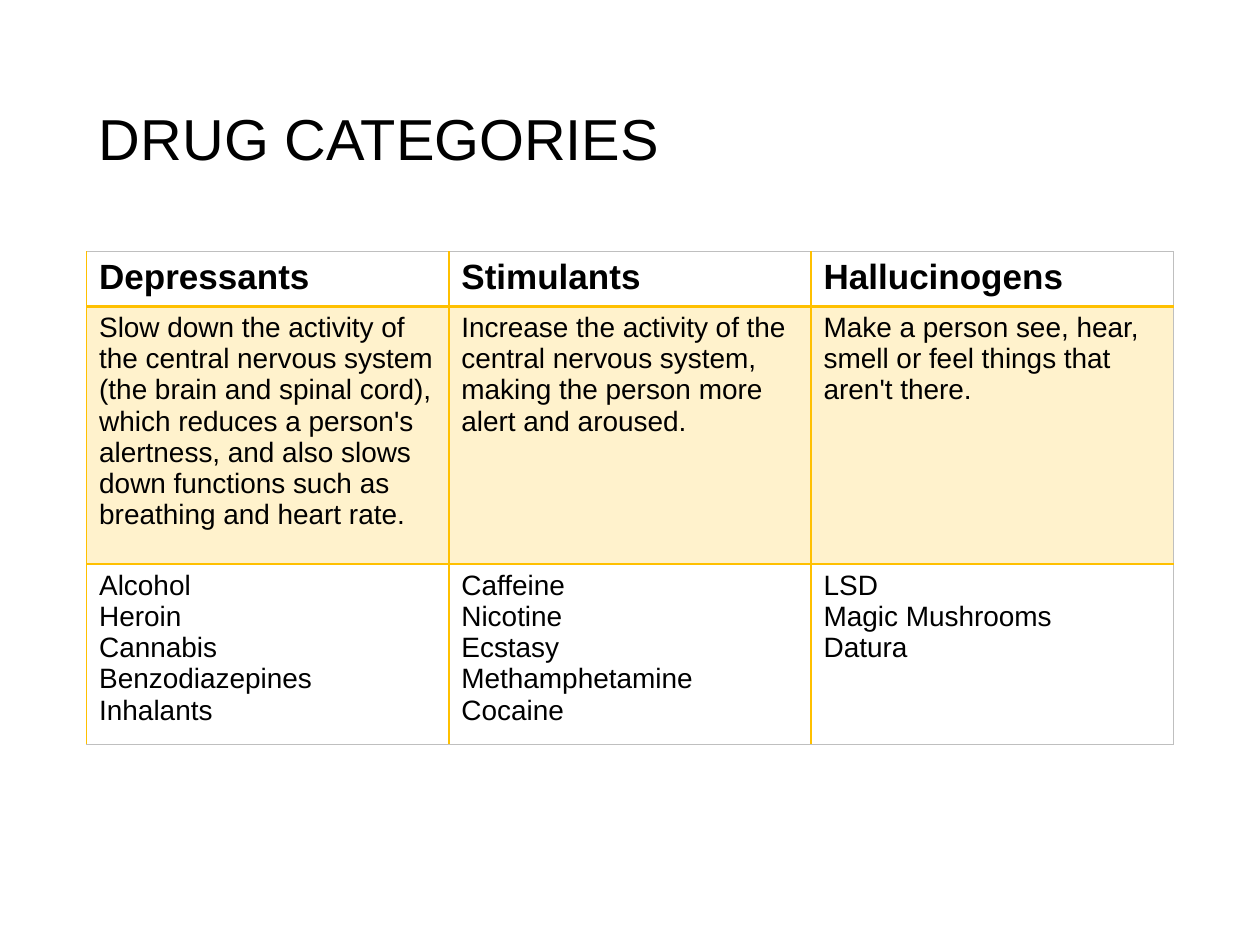
import pptx
import pptx.dml.color
import pptx.enum.text
import pptx.oxml.ns
import pptx.util
import lxml.etree

Pt = pptx.util.Pt
GOLD = "FFC000"
PALE_GOLD = "FFF2CC"
GREY = "BFBFBF"
LEFT, WIDTH = 49.5, 621
ROW_HEIGHTS = [29.7, 147.4, 96.2]
HEADINGS = ["Depressants", "Stimulants", "Hallucinogens"]
EFFECTS = [
    "Slow down the activity of the central nervous system (the brain and spinal cord), "
    "which reduces a person's alertness, and also slows down functions such as "
    "breathing and heart rate.",
    "Increase the activity of the central nervous system, making the person more "
    "alert and aroused.",
    "Make a person see, hear, smell or feel things that aren't there.",
]
EXAMPLES = [
    "Alcohol\nHeroin\nCannabis\nBenzodiazepines\nInhalants",
    "Caffeine\nNicotine\nEcstasy\nMethamphetamine\nCocaine",
    "LSD\nMagic Mushrooms\nDatura",
]


def color(value):
    return pptx.dml.color.RGBColor.from_string(value)


def write_text(frame, text, size=16, bold=False, line_spacing=None):
    frame.word_wrap = True
    frame.text = text
    for paragraph in frame.paragraphs:
        paragraph.line_spacing = line_spacing
        font = paragraph.runs[0].font
        font.name = "Arial"
        font.size = Pt(size)
        font.bold = bold
        font.color.rgb = color("000000")


def add_border(cell, side, value, width):
    name = pptx.oxml.ns.qn
    properties = cell._tc.get_or_add_tcPr()
    line = lxml.etree.SubElement(properties, name(f"a:ln{side}"), w=str(Pt(width)))
    fill = lxml.etree.SubElement(line, name("a:solidFill"))
    lxml.etree.SubElement(fill, name("a:srgbClr"), val=value)


def style_cell(cell, row, column, last_row, last_column):
    edge, inner, header = (GREY, 0.5), (GOLD, 1), (GOLD, 2)
    add_border(cell, "L", *(inner if column else (GOLD, 0.75)))
    add_border(cell, "R", *(edge if column == last_column else inner))
    add_border(cell, "T", *(edge if row == 0 else header if row == 1 else inner))
    add_border(cell, "B", *(header if row == 0 else edge if row == last_row else inner))
    if row == 1:
        cell.fill.solid()
        cell.fill.fore_color.rgb = color(PALE_GOLD)
    else:
        cell.fill.background()


def add_title(slide, text):
    shape = slide.shapes.add_textbox(Pt(LEFT), Pt(28.8), Pt(WIDTH), Pt(104.4))
    write_text(shape.text_frame, text, size=33, line_spacing=0.9)
    shape.text_frame.vertical_anchor = pptx.enum.text.MSO_ANCHOR.MIDDLE


def add_category_table(slide, rows):
    last_row, last_column = len(rows) - 1, len(rows[0]) - 1
    table = slide.shapes.add_table(
        len(rows), len(rows[0]), Pt(LEFT), Pt(143.75), Pt(WIDTH), Pt(sum(ROW_HEIGHTS))
    ).table
    table.first_row = False
    table.horz_banding = False
    for row, texts in enumerate(rows):
        table.rows[row].height = Pt(ROW_HEIGHTS[row])
        for column, text in enumerate(texts):
            cell = table.cell(row, column)
            write_text(cell.text_frame, text, size=16 if row else 20, bold=row == 0)
            style_cell(cell, row, column, last_row, last_column)


def main():
    presentation = pptx.Presentation()
    presentation.slide_width = Pt(720)
    presentation.slide_height = Pt(540)
    slide = presentation.slides.add_slide(presentation.slide_layouts[6])
    add_title(slide, "DRUG CATEGORIES")
    add_category_table(slide, [HEADINGS, EFFECTS, EXAMPLES])
    presentation.save("out.pptx")


if __name__ == "__main__":
    main()
